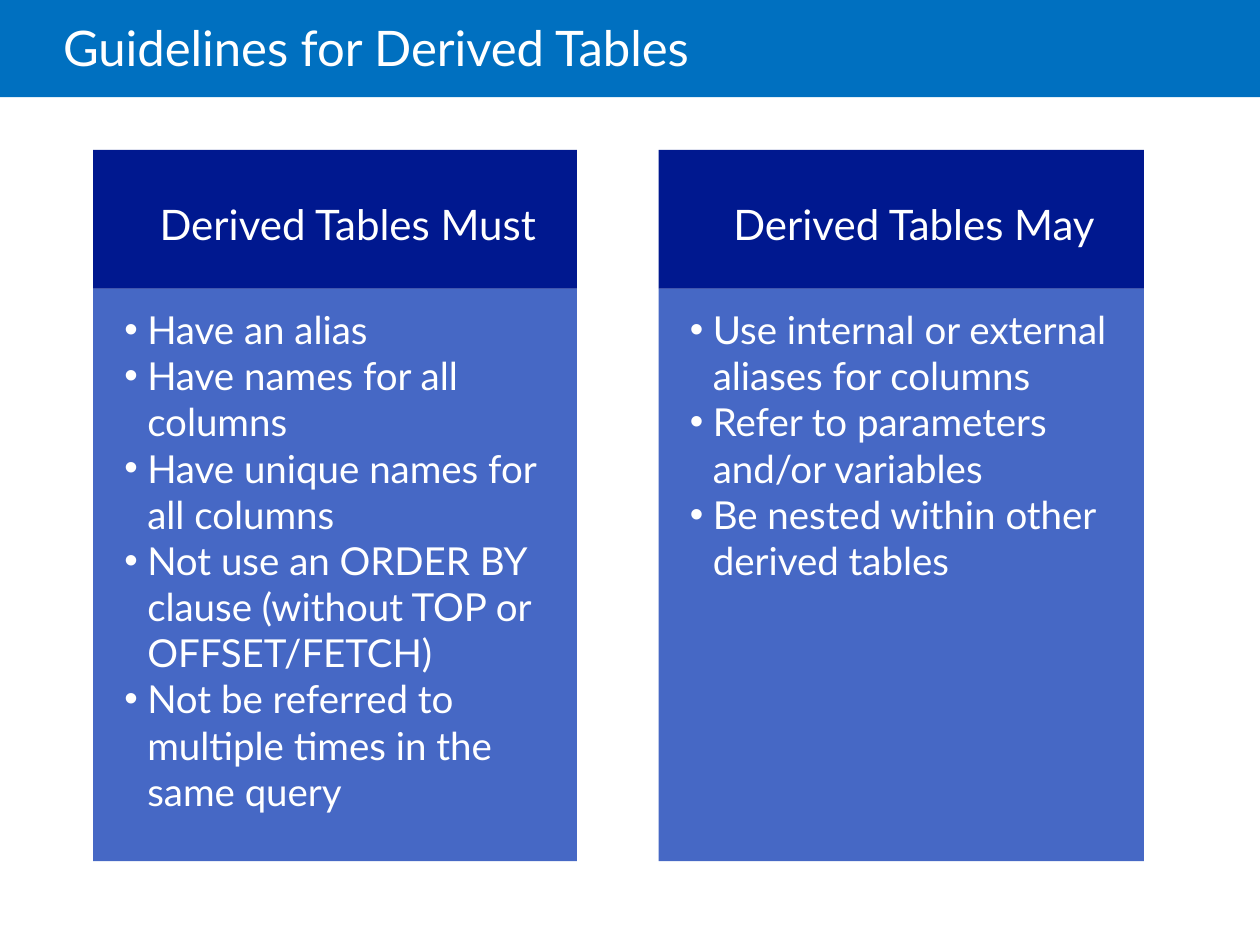
from lxml.etree import SubElement
from pptx import Presentation
from pptx.dml.color import RGBColor
from pptx.enum.shapes import MSO_SHAPE as Shape
from pptx.enum.text import MSO_ANCHOR as Anchor, MSO_AUTO_SIZE as AutoSize, PP_ALIGN as Align
from pptx.oxml.ns import qn
from pptx.util import Cm, Pt

FONT = "Lato"
WHITE = RGBColor(0xFF, 0xFF, 0xFF)
BANNER_BLUE = RGBColor(0x00, 0x70, 0xC0)
HEADER_NAVY = RGBColor(0x00, 0x18, 0x8F)
BODY_BLUE = RGBColor(0x46, 0x68, 0xC5)

SLIDE_WIDTH, SLIDE_HEIGHT = 25.4, 19.05
PANEL_TOP, PANEL_HEIGHT, HEADER_HEIGHT = 3.02, 14.34, 2.8
BULLET_INDENT = 0.46

PANELS = [
    (1.88, 9.75, "Derived Tables Must", [
        "Have an alias",
        "Have names for all columns",
        "Have unique names for all columns",
        "Not use an ORDER BY clause (without TOP or OFFSET/FETCH)",
        "Not be referred to multiple times in the same query",
    ]),
    (13.28, 9.78, "Derived Tables May", [
        "Use internal or external aliases for columns",
        "Refer to parameters and/or variables",
        "Be nested within other derived tables",
    ]),
]


def add_block(slide, kind, left, top, width, height, color):
    """Add a flat filled shape without outline or shadow."""
    shape = slide.shapes.add_shape(kind, Cm(left), Cm(top), Cm(width), Cm(height))
    shape.shadow.inherit = False
    shape.fill.solid()
    shape.fill.fore_color.rgb = color
    shape.line.fill.background()
    return shape


def add_bullet(paragraph):
    """Give a paragraph a round bullet with a hanging indent."""
    properties = paragraph._p.get_or_add_pPr()
    properties.set("marL", str(Cm(BULLET_INDENT)))
    properties.set("indent", str(-Cm(BULLET_INDENT)))
    SubElement(properties, qn("a:buFont"), typeface="Arial")
    SubElement(properties, qn("a:buChar"), char="•")


def write_text(shape, lines, size, align=Align.LEFT, anchor=Anchor.TOP,
               insets=(0, 0, 0, 0), spacing=None, bullets=False):
    """Fill a shape with one formatted paragraph per line."""
    frame = shape.text_frame
    frame.word_wrap = True
    frame.auto_size = AutoSize.NONE
    frame.vertical_anchor = anchor
    (frame.margin_left, frame.margin_top,
     frame.margin_right, frame.margin_bottom) = map(Cm, insets)
    frame.text = "\n".join(lines)
    for paragraph in frame.paragraphs:
        paragraph.alignment = align
        paragraph.line_spacing = spacing
        paragraph.font.name = FONT
        paragraph.font.size = Pt(size)
        paragraph.font.color.rgb = WHITE
        if bullets:
            add_bullet(paragraph)


def add_title(slide, text, left, top, width, height):
    """Place the title over a full-width banner."""
    banner = add_block(slide, Shape.RECTANGLE, 0, 0, SLIDE_WIDTH, 1.96, BANNER_BLUE)
    title = slide.shapes.title
    title.element.addprevious(banner.element)
    title.left, title.top, title.width, title.height = map(Cm, (left, top, width, height))
    write_text(title, [text], 28, anchor=Anchor.MIDDLE,
               insets=(0, 0.13, 0.25, 0.13), spacing=0.85)


def add_panel(slide, heading, items, left, top, width, height):
    """Place a heading block above a bulleted body block."""
    body = add_block(slide, Shape.ROUNDED_RECTANGLE, left, top + HEADER_HEIGHT,
                     width, height - HEADER_HEIGHT, BODY_BLUE)
    body.adjustments[0] = 0
    header = add_block(slide, Shape.RECTANGLE, left, top, width, HEADER_HEIGHT, HEADER_NAVY)
    write_text(header, [heading], 24, align=Align.CENTER, anchor=Anchor.MIDDLE,
               insets=(0.76, 0.3, 0.25, 0.13))
    text_box = slide.shapes.add_textbox(Cm(left + 0.63), Cm(top + HEADER_HEIGHT + 0.35),
                                        Cm(width - 1.08), Cm(10.57))
    write_text(text_box, items, 22, bullets=True)


def main():
    """Build and save the presentation."""
    presentation = Presentation()
    presentation.slide_width = Cm(SLIDE_WIDTH)
    presentation.slide_height = Cm(SLIDE_HEIGHT)
    slide = presentation.slides.add_slide(presentation.slide_layouts.get_by_name("Title Only"))
    add_title(slide, "Guidelines for Derived Tables", 1.27, 0, 21.59, 2.06)
    for left, width, heading, items in PANELS:
        add_panel(slide, heading, items, left, PANEL_TOP, width, PANEL_HEIGHT)
    presentation.save("out.pptx")


if __name__ == "__main__":
    main()
